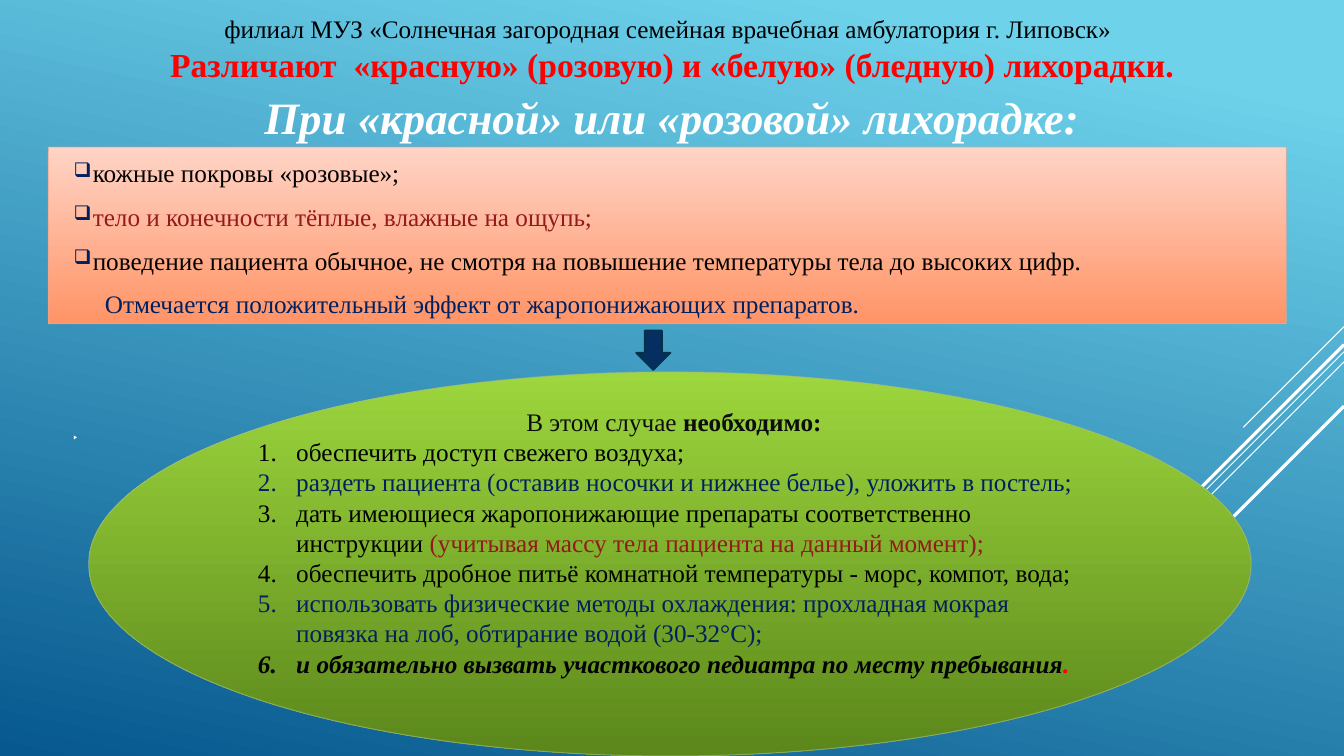
"""Builds a slide on the signs of red fever and the steps to take."""
from lxml.etree import SubElement
from pptx import Presentation
from pptx.dml.color import RGBColor
from pptx.enum.shapes import MSO_CONNECTOR, MSO_SHAPE as Shape
from pptx.enum.text import PP_ALIGN as Align
from pptx.oxml.ns import qn
from pptx.util import Inches, Pt

WHITE = RGBColor(255, 255, 255)
BLACK = RGBColor(0, 0, 0)
INK = RGBColor(0x0D, 0x0D, 0x0D)
RED = RGBColor(255, 0, 0)
MAROON = RGBColor(0x94, 0x1A, 0x1B)
NAVY = RGBColor(0, 0x20, 0x60)
ARROW_FILL = RGBColor(0x05, 0x2F, 0x61)
ARROW_EDGE = RGBColor(0x04, 0x31, 0x48)
SKY = (RGBColor(0x6E, 0xD2, 0xEB), RGBColor(0x06, 0x58, 0x8E))
PEACH = (RGBColor(0xFF, 0xD4, 0xC6), RGBColor(0xFF, 0x94, 0x67))
GREEN = (RGBColor(0x9D, 0xD6, 0x3D), RGBColor(0x5B, 0x87, 0x1B))
PEACH_EDGE = RGBColor(0xEE, 0xA7, 0x8F)
GREEN_EDGE = RGBColor(0xA4, 0xBB, 0x8B)
SERIF, SANS = "Times New Roman", "Open Sans"
WIDTH, HEIGHT = 13.33, 7.5

RAYS = [(3.24, 1, 0.75), (3.49, 3.26, 0.75), (3.59, 2.07, 0.75),
        (3.42, 1.91, 2.25), (4.03, 1.39, 2.25)]
PANELS = [
    (Shape.RECTANGLE, (0.48, 1.46, 12.28, 1.75), PEACH, PEACH_EDGE),
    (Shape.OVAL, (0.88, 3.69, 11.53, 3.81), GREEN, GREEN_EDGE),
]
HEADINGS = [
    ((0, 0.08, 13.25, 0.39), "филиал МУЗ «Солнечная загородная семейная врачебная амбулатория г. Липовск»",
     {"size": Pt(18), "color": BLACK}),
    ((0, 0.39, WIDTH, 0.5), "Различают  «красную» (розовую) и «белую» (бледную) лихорадки.",
     {"size": Pt(24), "color": RED, "bold": True}),
    ((0, 0.84, WIDTH, 0.64), "При «красной» или «розовой» лихорадке:",
     {"size": Pt(32), "color": WHITE, "bold": True, "italic": True}),
]
SIGNS = [
    ("кожные покровы «розовые»;", BLACK),
    ("тело и конечности тёплые, влажные на ощупь;", MAROON),
    ("поведение пациента обычное, не смотря на повышение температуры тела до высоких цифр.", BLACK),
]
EFFECT = "Отмечается положительный эффект от жаропонижающих препаратов."
STRONG = {"bold": True, "italic": True}
INTRO = [("В этом случае ", {"color": INK}), ("необходимо:", {"color": INK, "bold": True})]
STEPS = [
    [("обеспечить доступ свежего воздуха;", {"color": BLACK})],
    [("раздеть пациента (оставив носочки и нижнее белье), уложить в постель;", {"color": NAVY})],
    [("дать имеющиеся жаропонижающие препараты соответственно инструкции ", {"color": BLACK}),
     ("(учитывая массу тела пациента на данный момент);", {"color": MAROON})],
    [("обеспечить дробное питьё комнатной температуры - морс, компот, вода;", {"color": BLACK})],
    [("использовать физические методы охлаждения: прохладная мокрая повязка на лоб, "
      "обтирание водой (30-32°С);", {"color": NAVY})],
    [("и обязательно вызвать участкового педиатра по месту пребывания", {"color": BLACK, **STRONG}),
     (".", {"color": RED, **STRONG})],
]


def set_gradient(fill, colors, angle, start=0):
    fill.gradient()
    fill.gradient_angle = 360 - angle
    for stop, color, position in zip(fill.gradient_stops, colors, (start, 1)):
        stop.color.rgb = color
        stop.position = position


def add_panel(page, kind, area, edge, weight):
    panel = page.shapes.add_shape(kind, *map(Inches, area))
    panel.shadow.inherit = False
    panel.line.color.rgb = edge
    panel.line.width = Pt(weight)
    return panel


def add_box(page, area, inset=(0.1, 0.05)):
    frame = page.shapes.add_textbox(*map(Inches, area)).text_frame
    frame.word_wrap = True
    frame.margin_left = frame.margin_right = Inches(inset[0])
    frame.margin_top = frame.margin_bottom = Inches(inset[1])
    return frame


def add_para(frame, spans, align=Align.LEFT, after=0):
    para = frame.paragraphs[0]
    if para.runs:
        para = frame.add_paragraph()
    para.alignment = align
    para.space_after = Pt(after)
    for text, style in spans:
        span = para.add_run()
        span.text = text
        for name, value in {"name": SERIF, "size": Pt(18), **style}.items():
            if name == "color":
                span.font.color.rgb = value
            else:
                setattr(span.font, name, value)
    return para


def set_indent(para, left, first):
    props = para._p.get_or_add_pPr()
    props.set("marL", str(Inches(left)))
    props.set("indent", str(Inches(first)))
    return props


def main():
    deck = Presentation()
    deck.slide_width, deck.slide_height = Inches(WIDTH), Inches(HEIGHT)
    page = deck.slides.add_slide(deck.slide_layouts[6])
    set_gradient(page.background.fill, SKY, 102, 0.1)

    for top, reach, weight in RAYS:
        ends = (WIDTH, top, WIDTH - reach, top + reach)
        ray = page.shapes.add_connector(MSO_CONNECTOR.STRAIGHT, *map(Inches, ends))
        ray.line.color.rgb = WHITE
        ray.line.width = Pt(weight)
        SubElement(ray._element.spPr, qn("a:effectLst"))

    for kind, area, colors, edge in PANELS:
        panel = add_panel(page, kind, area, edge, 0.75)
        set_gradient(panel.fill, colors, 90)
        tint = panel.line._ln.find(".//" + qn("a:srgbClr"))
        SubElement(tint, qn("a:alpha"), val="60000")

    signs = add_box(page, (0.73, 1.56, 11.92, 1.6), (0, 0))
    for text, color in SIGNS:
        para = add_para(signs, [(text, {"color": color})], Align.JUSTIFY, 9.7)
        props = set_indent(para, 0.19, -0.19)
        SubElement(SubElement(props, qn("a:buClr")), qn("a:srgbClr"), val=str(NAVY))
        SubElement(props, qn("a:buSzPct"), val="80000")
        SubElement(props, qn("a:buChar"), char="❑")
    set_indent(add_para(signs, [(EFFECT, {"color": NAVY})], Align.JUSTIFY), 0.31, 0)

    marker = add_box(page, (0.73, 4.3, 0.2, 0.08), (0, 0))
    add_para(marker, [("▶", {"name": SANS, "size": Pt(4), "color": WHITE})])

    for area, text, style in HEADINGS:
        add_para(add_box(page, area), [(text, style)], Align.CENTER)

    steps = add_box(page, (2.46, 3.98, 8.45, 2.83))
    add_para(steps, INTRO, Align.CENTER)
    for spans in STEPS:
        props = set_indent(add_para(steps, spans), 0.38, -0.38)
        SubElement(props, qn("a:buFont"), typeface="+mj-lt")
        SubElement(props, qn("a:buAutoNum"), type="arabicPeriod")

    arrow = add_panel(page, Shape.DOWN_ARROW, (6.31, 3.28, 0.34, 0.39), ARROW_EDGE, 1.25)
    arrow.fill.solid()
    arrow.fill.fore_color.rgb = ARROW_FILL
    deck.save("out.pptx")


if __name__ == "__main__":
    main()
